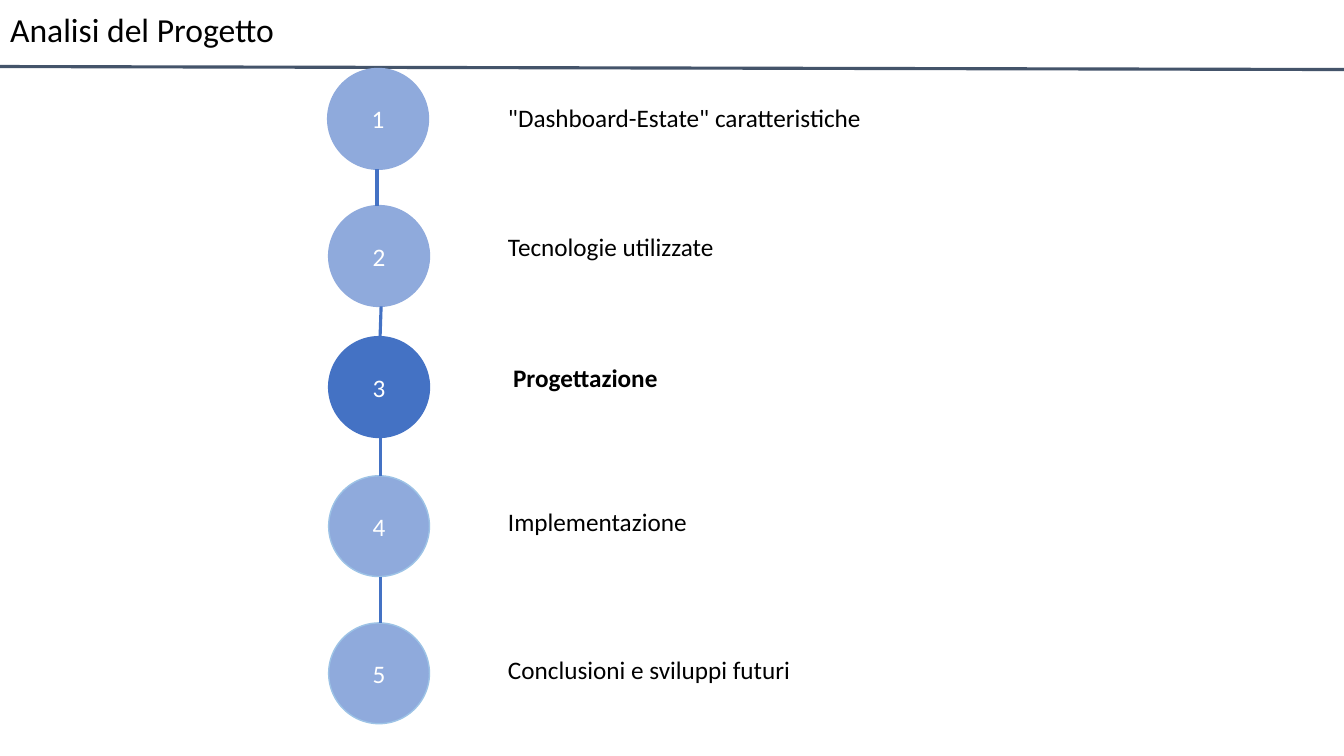
from pptx import Presentation
from pptx import util as u
from pptx.dml.color import RGBColor
from pptx.enum import shapes, text
from pptx.oxml.ns import qn
from lxml import etree

PX = 9144  # EMU per px, 100 px to the inch
FONT = "Calibri"
BLACK, WHITE = "000000", "FFFFFF"
NAVY, BLUE, PALE_BLUE, SKY = "44546A", "4472C4", "8FAADC", "9DC3E6"
CIRCLE_SIZE = 100

# label, circle left, circle top, label left, label top, fill, outline
STEPS = [
    ('"Dashboard-Estate" caratteristiche', 325, 68, 494, 97, PALE_BLUE, PALE_BLUE),
    ("Tecnologie utilizzate", 326, 204, 494, 225, PALE_BLUE, PALE_BLUE),
    ("Progettazione", 326, 334, 499, 355, BLUE, BLUE),
    ("Implementazione", 326, 472, 494, 497, PALE_BLUE, SKY),
    ("Conclusioni e sviluppi futuri", 326, 618, 494, 644, PALE_BLUE, SKY),
]
CURRENT_STEP = 3
# x at the top and at the bottom of the link below each circle
LINK_XS = [(374, 374), (378, 377), (377, 377), (377, 377)]


def px(*lengths):
    return [u.Emu(length * PX) for length in lengths]


def color(value):
    return RGBColor.from_string(value)


def write(frame, words, size=18, ink=BLACK, bold=False,
          align=text.PP_ALIGN.LEFT, anchor=text.MSO_ANCHOR.TOP, spacing=1.0):
    frame.word_wrap = True
    frame.vertical_anchor = anchor
    para = frame.paragraphs[0]
    para.alignment = align
    para.line_spacing = spacing
    span = para.add_run()
    span.text = words
    span.font.name = FONT
    span.font.size = u.Pt(size)
    span.font.bold = bold
    span.font.color.rgb = color(ink)


def add_title(page, words):
    title = page.shapes.title
    title.left, title.top, title.width, title.height = px(0, -1, 1241, 65)
    title.text_frame.auto_size = text.MSO_AUTO_SIZE.NONE
    write(title.text_frame, words, size=24, anchor=text.MSO_ANCHOR.MIDDLE, spacing=0.9)


def add_line(page, x1, y1, x2, y2, ink):
    line = page.shapes.add_connector(shapes.MSO_CONNECTOR.STRAIGHT, *px(x1, y1, x2, y2))
    line.line.color.rgb = color(ink)
    line.line.width = u.Pt(2.25)
    etree.SubElement(line._element.spPr, qn("a:effectLst"))


def add_circle(page, number, left, top, fill, outline):
    circle = page.shapes.add_shape(
        shapes.MSO_SHAPE.OVAL, *px(left, top, CIRCLE_SIZE, CIRCLE_SIZE))
    circle.shadow.inherit = False
    circle.fill.solid()
    circle.fill.fore_color.rgb = color(fill)
    circle.line.color.rgb = color(outline)
    circle.line.width = u.Pt(1)
    write(circle.text_frame, str(number), ink=WHITE,
          align=text.PP_ALIGN.CENTER, anchor=text.MSO_ANCHOR.MIDDLE)


def add_label(page, words, left, top, bold):
    box = page.shapes.add_textbox(*px(left, top, 497, 40))
    write(box.text_frame, words, bold=bold)
    box.text_frame.auto_size = text.MSO_AUTO_SIZE.SHAPE_TO_FIT_TEXT


def main():
    deck = Presentation()
    deck.slide_width, deck.slide_height = px(1333, 750)
    page = deck.slides.add_slide(deck.slide_layouts.get_by_name("Title Only"))
    add_title(page, "Analisi del Progetto")
    add_line(page, -5, 66, 1334, 69, NAVY)

    for number, step in enumerate(STEPS, 1):
        words, left, top, label_left, label_top, fill, outline = step
        add_circle(page, number, left, top, fill, outline)
        add_label(page, words, label_left, label_top, bold=number == CURRENT_STEP)

    tops = [step[2] for step in STEPS]
    for (x1, x2), top, next_top in zip(LINK_XS, tops, tops[1:]):
        add_line(page, x1, top + CIRCLE_SIZE, x2, next_top, BLUE)

    deck.save("out.pptx")


if __name__ == "__main__":
    main()
